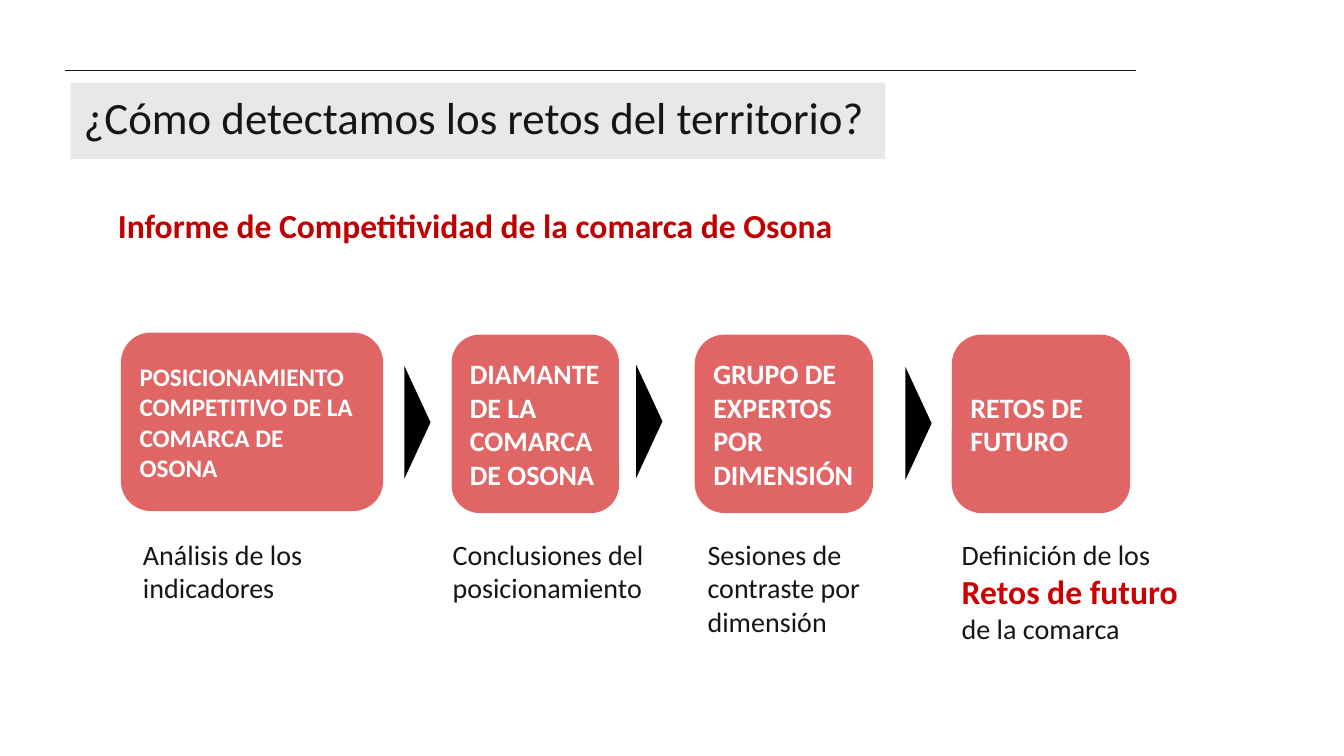
"""Build the slide on how the challenges of the territory are detected."""
from lxml.etree import SubElement
from pptx import Presentation
from pptx.dml.color import RGBColor
from pptx.enum.shapes import MSO_CONNECTOR, MSO_SHAPE
from pptx.enum.text import MSO_ANCHOR, MSO_AUTO_SIZE, PP_ALIGN
from pptx.oxml.ns import qn
from pptx.util import Inches, Pt

INK = RGBColor(0x15, 0x15, 0x15)
GREY = RGBColor(0xE8, 0xE8, 0xE8)
DARK_RED = RGBColor(0xC0, 0x00, 0x00)
BRIGHT_RED = RGBColor(0xCC, 0x00, 0x00)
CORAL = RGBColor(0xE0, 0x66, 0x66)
WHITE = RGBColor(0xFF, 0xFF, 0xFF)
BLACK = RGBColor(0x00, 0x00, 0x00)


def write(shape, text, size=20, color=INK, bold=False, anchor=MSO_ANCHOR.TOP,
          inset=0.1, line_spacing=1.0):
    """Add a formatted run to the first paragraph of a shape."""
    frame = shape.text_frame
    frame.word_wrap = True
    frame.auto_size = MSO_AUTO_SIZE.NONE
    frame.vertical_anchor = anchor
    frame.margin_left = frame.margin_right = Inches(inset)
    frame.margin_top = frame.margin_bottom = Inches(inset)
    paragraph = frame.paragraphs[0]
    paragraph.alignment = PP_ALIGN.LEFT
    paragraph.line_spacing = line_spacing
    paragraph.space_before = Pt(0)
    run = paragraph.add_run()
    run.text = text
    run.font.name = "Calibri"
    run.font.size = Pt(size)
    run.font.bold = bold
    run.font.color.rgb = color


def add_filled_shape(kind, left, top, width, height, color):
    """Add a flat shape without outline."""
    shape = slide.shapes.add_shape(
        kind, Inches(left), Inches(top), Inches(width), Inches(height))
    shape.shadow.inherit = False
    shape.fill.solid()
    shape.fill.fore_color.rgb = color
    shape.line.fill.background()
    return shape


presentation = Presentation()
presentation.slide_width = Inches(13.33)
presentation.slide_height = Inches(7.5)
slide = presentation.slides.add_slide(presentation.slide_layouts[5])

rule = slide.shapes.add_connector(
    MSO_CONNECTOR.STRAIGHT, Inches(0.64), Inches(0.7), Inches(11.27), Inches(0.7))
rule.line.color.rgb = INK
rule.line.width = Pt(0.5)
SubElement(rule._element.spPr, qn("a:effectLst"))

title = slide.shapes.title
title.left, title.top = Inches(0.7), Inches(0.82)
title.width, title.height = Inches(8.08), Inches(0.76)
title.fill.solid()
title.fill.fore_color.rgb = GREY
write(title, "¿Cómo detectamos los retos del territorio?", size=32,
      inset=0.13, line_spacing=0.9)

subtitle = slide.shapes.add_textbox(
    Inches(1.07), Inches(1.98), Inches(7.32), Inches(0.63))
write(subtitle, "Informe de Competitividad de la comarca de Osona", size=24,
      color=DARK_RED, bold=True, line_spacing=0.9)

steps = [
    ("POSICIONAMIENTO COMPETITIVO DE LA COMARCA DE OSONA", 1.2, 3.3, 2.6, 18),
    ("DIAMANTE DE LA COMARCA DE OSONA", 4.48, 3.32, 1.66, 20),
    ("GRUPO DE EXPERTOS POR DIMENSIÓN", 6.89, 3.32, 1.77, 20),
    ("RETOS DE FUTURO", 9.44, 3.32, 1.77, 20),
]
for text, left, top, width, size in steps:
    step = add_filled_shape(
        MSO_SHAPE.ROUNDED_RECTANGLE, left, top, width, 1.77, CORAL)
    step.adjustments[0] = 0.167
    write(step, text, size=size, color=WHITE, bold=True, anchor=MSO_ANCHOR.MIDDLE)

for left, top in [(3.58, 4.06), (5.88, 4.05), (8.55, 4.07)]:
    arrow = add_filled_shape(
        MSO_SHAPE.FLOWCHART_EXTRACT, left, top, 1.12, 0.26, BLACK)
    arrow.rotation = 90

captions = [
    (1.32, 2.13, 0.87, [("Análisis de los indicadores", {})]),
    (4.39, 2.18, 0.87, [("Conclusiones del posicionamiento", {})]),
    (6.92, 1.86, 1.09, [("Sesiones de contraste por dimensión", {})]),
    (9.44, 2.68, 1.09, [
        ("Definición de los ", {}),
        ("Retos de futuro ", {"size": 24, "color": BRIGHT_RED, "bold": True}),
        ("de la comarca", {}),
    ]),
]
for left, width, height, parts in captions:
    caption = slide.shapes.add_textbox(
        Inches(left), Inches(5.23), Inches(width), Inches(height))
    for text, text_format in parts:
        write(caption, text, **text_format)

presentation.save("out.pptx")
